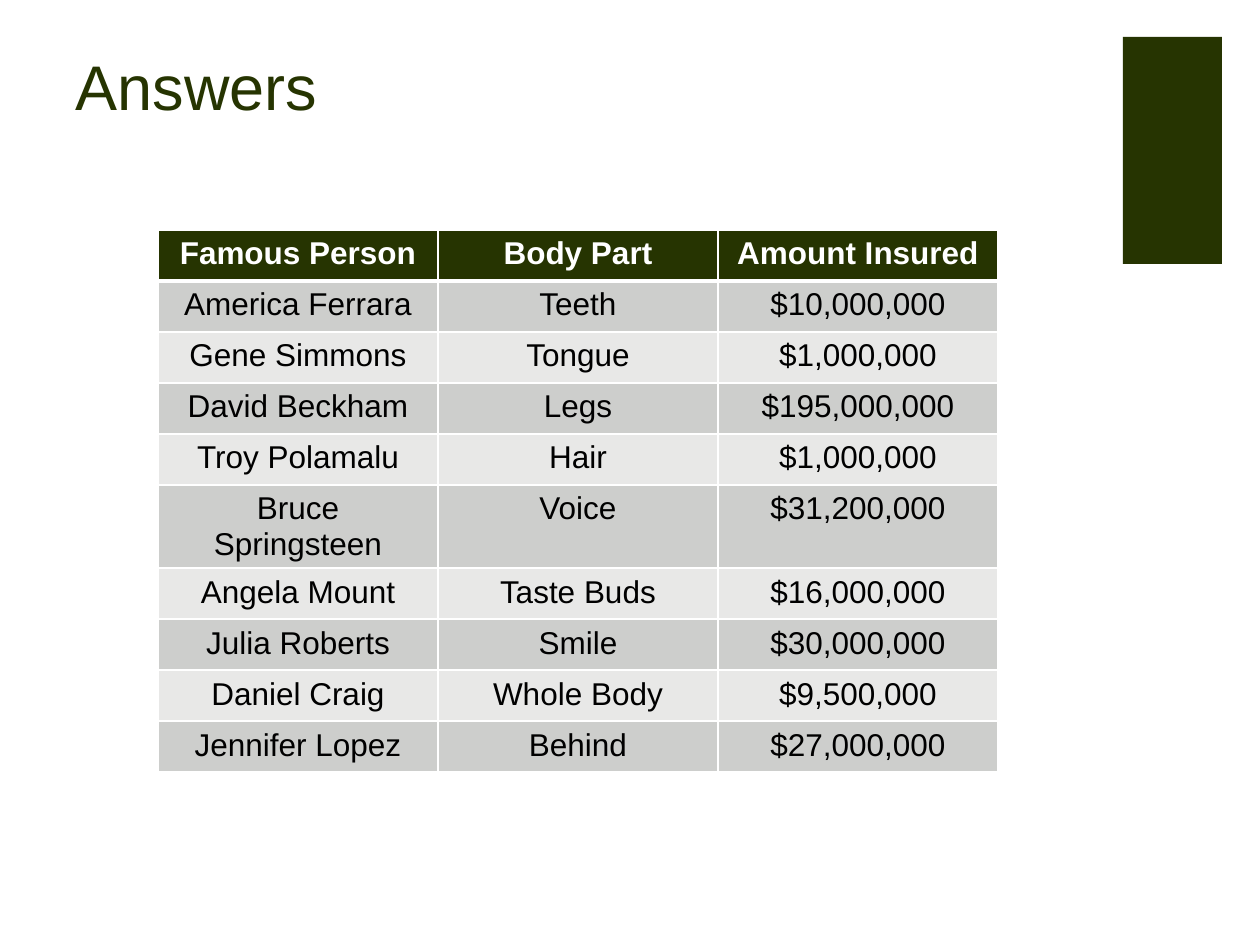
from lxml import etree
from pptx import Presentation
from pptx import util as u
from pptx.dml.color import RGBColor
from pptx.enum import shapes, text
from pptx.oxml.ns import qn

SCALE = 914400 / 126
GREEN, WHITE, BLACK = "263401", "FFFFFF", "000000"
BANDS = ["CDCECC", "E8E8E7"]
ROWS = [
    ("Famous Person", "Body Part", "Amount Insured"),
    ("America Ferrara", "Teeth", "$10,000,000"),
    ("Gene Simmons", "Tongue", "$1,000,000"),
    ("David Beckham", "Legs", "$195,000,000"),
    ("Troy Polamalu", "Hair", "$1,000,000"),
    ("Bruce Springsteen", "Voice", "$31,200,000"),
    ("Angela Mount", "Taste Buds", "$16,000,000"),
    ("Julia Roberts", "Smile", "$30,000,000"),
    ("Daniel Craig", "Whole Body", "$9,500,000"),
    ("Jennifer Lopez", "Behind", "$27,000,000"),
]


def px(num):
    return u.Emu(round(num * SCALE))


def paint(fill, color):
    fill.solid()
    fill.fore_color.rgb = RGBColor.from_string(color)


def write(frame, words, size=18, color=BLACK, bold=False, align=text.PP_ALIGN.CENTER):
    para = frame.paragraphs[0]
    para.alignment = align
    run = para.add_run()
    run.text = words
    run.font.name = "Arial"
    run.font.size = u.Pt(size)
    run.font.bold = bold
    run.font.color.rgb = RGBColor.from_string(color)


def edge(cell, side, width):
    props = cell._tc.get_or_add_tcPr()
    line = etree.SubElement(props, qn("a:ln" + side), w=str(u.Pt(width)))
    fill = etree.SubElement(line, qn("a:solidFill"))
    etree.SubElement(fill, qn("a:srgbClr"), val=WHITE)


def add_bar(slide):
    bar = slide.shapes.add_shape(
        shapes.MSO_SHAPE.RECTANGLE, px(1123), px(37), px(99), px(227))
    bar.shadow.inherit = False
    paint(bar.fill, GREEN)
    bar.line.fill.background()


def add_title(slide):
    title = slide.shapes.title
    title.left, title.top, title.width, title.height = map(px, (63, 50, 306, 77))
    frame = title.text_frame
    frame.auto_size = text.MSO_AUTO_SIZE.NONE
    frame.vertical_anchor = text.MSO_ANCHOR.BOTTOM
    frame.margin_top, frame.margin_bottom = 0, px(4)
    write(frame, "Answers", size=36, color=GREEN, align=text.PP_ALIGN.LEFT)


def add_grid(slide):
    grid = slide.shapes.add_table(
        len(ROWS), 3, px(158), px(230), px(840), px(51 * len(ROWS))).table
    for i, row in enumerate(ROWS):
        head = i == 0
        for j, words in enumerate(row):
            cell = grid.cell(i, j)
            for side in "LRTB":
                thick = (head and side == "B") or (i == 1 and side == "T")
                edge(cell, side, 3 if thick else 1)
            paint(cell.fill, GREEN if head else BANDS[(i - 1) % 2])
            write(cell.text_frame, words, color=WHITE if head else BLACK, bold=head)


def main():
    deck = Presentation()
    deck.slide_width, deck.slide_height = px(1260), px(945)
    slide = deck.slides.add_slide(deck.slide_layouts[5])
    paint(slide.background.fill, WHITE)
    add_bar(slide)
    add_title(slide)
    add_grid(slide)
    deck.save("out.pptx")


if __name__ == "__main__":
    main()
